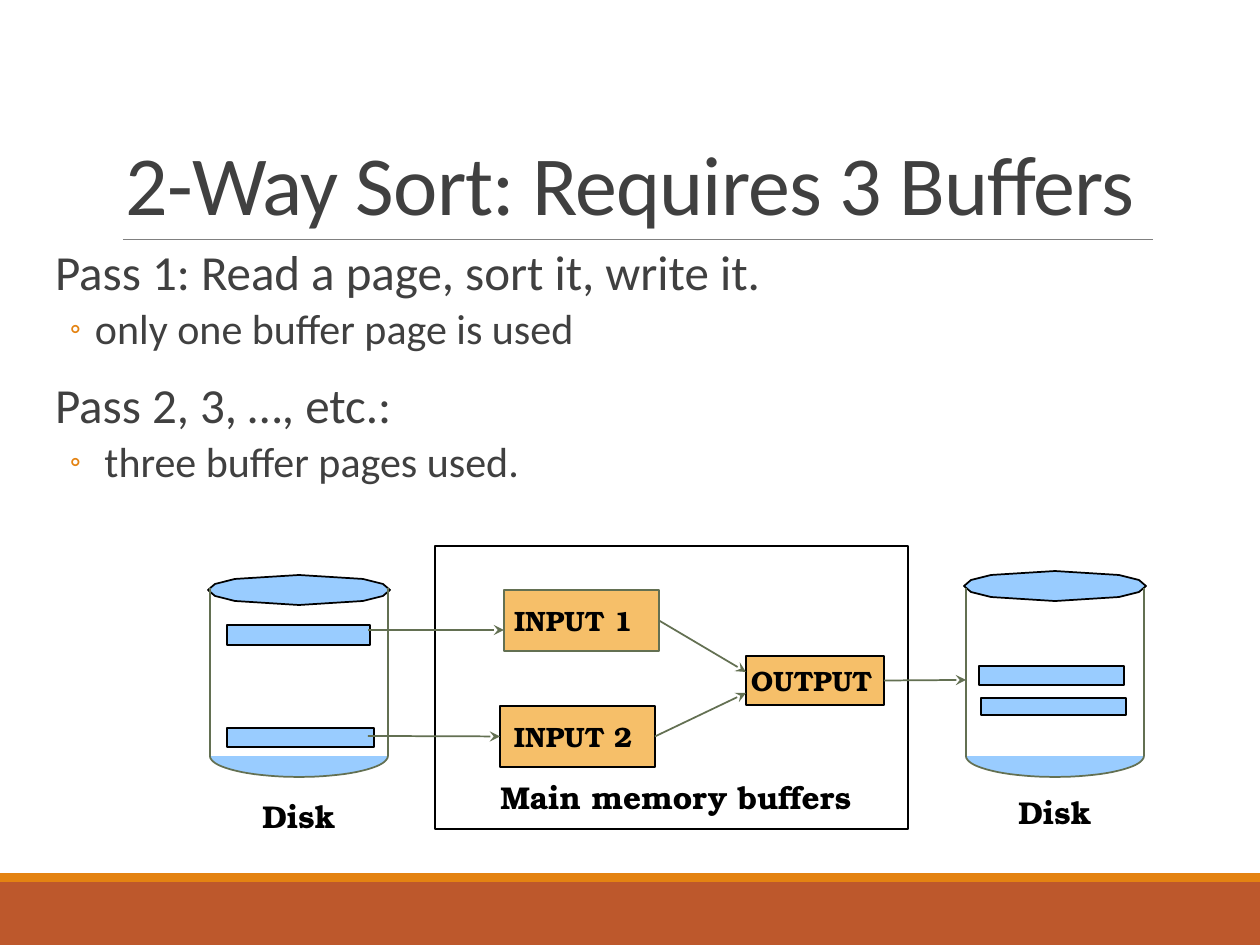
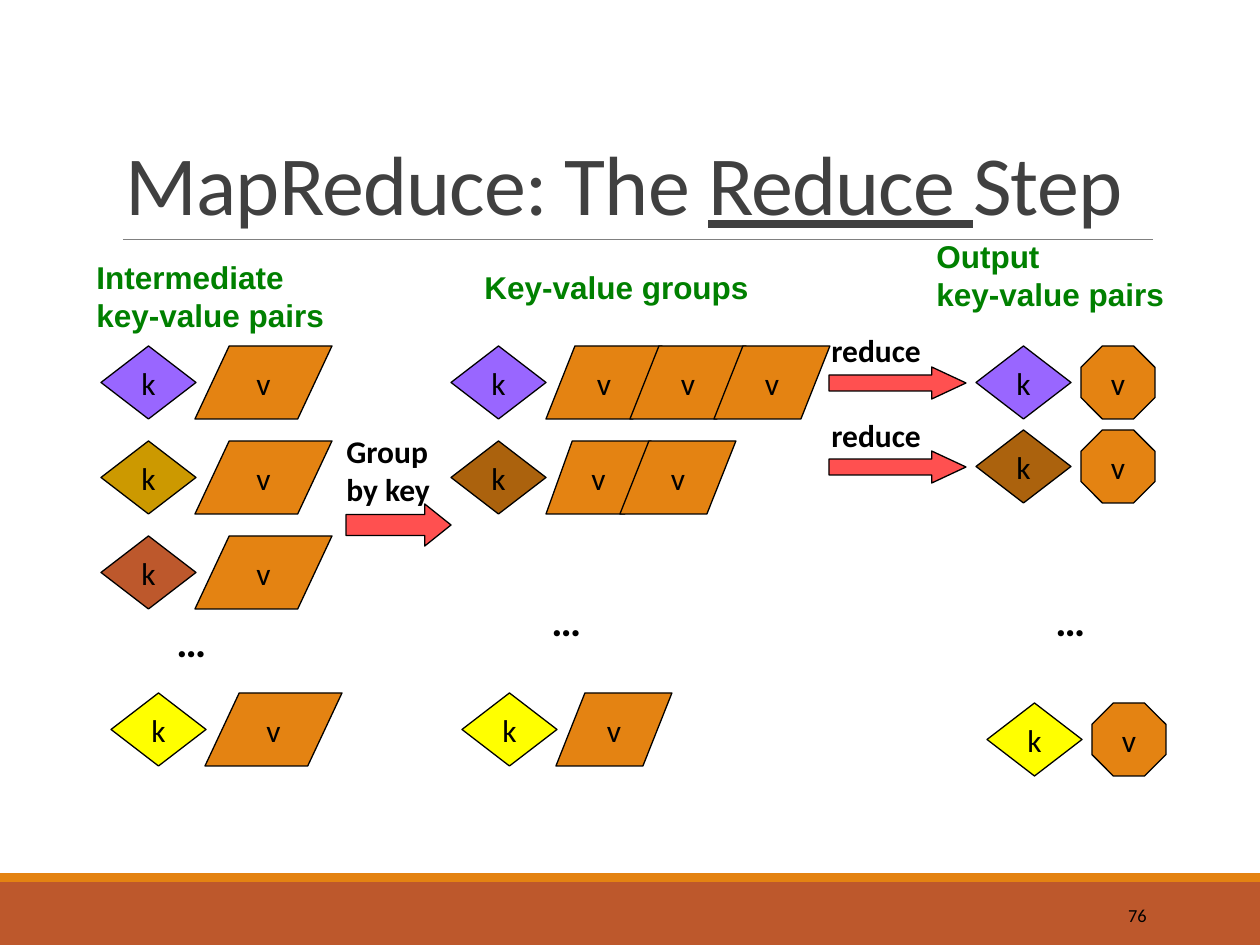
import math

import lxml.etree
import pptx
import pptx.dml.color
import pptx.enum.shapes
import pptx.enum.text
import pptx.oxml.ns
import pptx.util

SHAPE = pptx.enum.shapes.MSO_SHAPE
ALIGN = pptx.enum.text.PP_ALIGN
ANCHOR = pptx.enum.text.MSO_ANCHOR

# Shared look; all lengths are px at 126 to the inch
EMU_PER_PX = 914400 / 126
WIDTH, HEIGHT = 1260, 945
COLORS = {
    "band": "BD582C", "stripe": "E48312", "rule": "808080", "text": "404040",
    "black": "000000", "disk": "99CCFF", "buffer": "F6BF69", "outline": "637052",
    "heading": "008000", "arrow": "FF5050", "value": "E48312",
    "purple": "9966FF", "gold": "CC9900", "rust": "BD582C",
    "brown": "AB620D", "yellow": "FFFF00",
}
SANS, HEADING, SERIF = "Calibri", "Arial", "TeX Gyre Bonum"

# Slide 1 content
SORT_TITLE = [("2-Way Sort: Requires 3 Buffers", False)]
SORT_LINES = [
    (0, "Pass 1: Read a page, sort it, write it."),
    (1, "only one buffer page is used"),
    (0, "Pass 2, 3, …, etc.:"),
    (1, " three buffer pages used."),
]
LINE_STYLES = [  # size, space before, space after, left margin, indent
    (28, 12, 2, 13, 0),
    (24, 2, 4, 53, -25),
]
DISKS = [  # centre, lid middle, label top, pages
    (299, 590, 791, [(227, 625, 143, 20), (227, 728, 147, 19)]),
    (1055, 586, 787, [(979, 666, 145, 19), (981, 698, 145, 17)]),
]
DISK_RADIUS, DISK_TOP, DISK_BOTTOM, BOWL_DEPTH = 89, 588, 756, 21
LID_QUARTER = [(91, 0), (84, 6), (64, 11), (0, 15)]
MEMORY = (435, 546, 473, 283)
BUFFERS = {  # box, text inset, line
    "INPUT 1": ((504, 590, 155, 61), 10, "outline"),
    "INPUT 2": ((500, 706, 155, 61), 14, "black"),
    "OUTPUT": ((746, 656, 138, 49), 5, "black"),
}
FLOWS = [  # start, end, buffer joined at start, buffer joined at end
    ((368, 630), (504, 630), None, None),
    ((368, 736), (500, 736), None, "INPUT 2"),
    ((659, 620), (746, 672), "INPUT 1", None),
    ((655, 736), (746, 693), "INPUT 2", None),
    ((884, 680), (966, 680), "OUTPUT", None),
]

# Slide 2 content
REDUCE_TITLE = [("MapReduce: The ", False), ("Reduce ", True), ("Step", False)]
HEADINGS = [
    (84, 252, 270, ["Intermediate", "key-value pairs"]),
    (472, 262, 325, ["Key-value groups"]),
    (924, 231, 283, ["Output", "key-value pairs"]),
]
KEY_SIZE = (95, 73)
INPUT_PAIR = [(94, 137)]  # value offset from the key, value width
OUTPUT_PAIR = [(105, 74)]
KEY_VALUES = [  # left, top, key colour, values, value shape
    (111, 693, "yellow", INPUT_PAIR, SHAPE.PARALLELOGRAM),
    (101, 346, "purple", INPUT_PAIR, SHAPE.PARALLELOGRAM),
    (101, 441, "gold", INPUT_PAIR, SHAPE.PARALLELOGRAM),
    (101, 536, "rust", INPUT_PAIR, SHAPE.PARALLELOGRAM),
    (451, 346, "purple", [(95, 116), (179, 116), (263, 116)], SHAPE.PARALLELOGRAM),
    (451, 441, "brown", [(95, 105), (169, 116)], SHAPE.PARALLELOGRAM),
    (462, 693, "yellow", [(94, 116)], SHAPE.PARALLELOGRAM),
    (976, 346, "purple", OUTPUT_PAIR, SHAPE.OCTAGON),
    (976, 430, "brown", OUTPUT_PAIR, SHAPE.OCTAGON),
    (987, 703, "yellow", OUTPUT_PAIR, SHAPE.OCTAGON),
]
STEPS = [  # arrow box, label corner, label lines
    ((346, 504, 105, 42), (334, 426), ["Group", "by key"]),
    ((829, 367, 137, 32), (819, 325), ["reduce"]),
    ((829, 451, 137, 32), (819, 410), ["reduce"]),
]
ELLIPSES = [(164, 609), (539, 588), (1043, 588)]
PAGE_NUMBER = "76"


def px(length):
    return pptx.util.Emu(round(length * EMU_PER_PX))


def rgb(name):
    return pptx.dml.color.RGBColor.from_string(COLORS[name])


def place(shape, left, top, width, height):
    shape.left, shape.top = px(left), px(top)
    shape.width, shape.height = px(width), px(height)


def add_run(paragraph, text, size, font=SANS, color="black", bold=False):
    run = paragraph.add_run()
    run.text = text
    run.font.size, run.font.name, run.font.bold = pptx.util.Pt(size), font, bold
    run.font.color.rgb = rgb(color)
    return run


def paint(shape, fill=None, line=None, weight=1):
    shape.shadow.inherit = False
    if fill:
        shape.fill.solid()
        shape.fill.fore_color.rgb = rgb(fill)
    else:
        shape.fill.background()
    if line:
        shape.line.color.rgb = rgb(line)
        shape.line.width = pptx.util.Pt(weight)
    else:
        shape.line.fill.background()
    return shape


def add_preset(slide, preset, box, fill=None, line=None, weight=1):
    shape = slide.shapes.add_shape(preset, *map(px, box))
    return paint(shape, fill, line, weight)


def add_outline(slide, points, close):
    builder = slide.shapes.build_freeform(
        round(points[0][0] * 10), round(points[0][1] * 10), scale=EMU_PER_PX / 10)
    builder.add_line_segments(
        [(round(x * 10), round(y * 10)) for x, y in points[1:]], close=close)
    return builder.convert_to_shape()


def add_line(slide, start, end, color="outline", weight=1, arrow=False):
    line = slide.shapes.add_connector(
        pptx.enum.shapes.MSO_CONNECTOR.STRAIGHT, *map(px, (*start, *end)))
    line.line.color.rgb = rgb(color)
    line.line.width = pptx.util.Pt(weight)
    if arrow:
        lxml.etree.SubElement(line.line._get_or_add_ln(),
                              pptx.oxml.ns.qn("a:tailEnd"), type="stealth")
    lxml.etree.SubElement(line._element.spPr, pptx.oxml.ns.qn("a:effectLst"))
    return line


def add_label(slide, box, lines, size=18, font=SANS, color="black", bold=True):
    label = slide.shapes.add_textbox(*map(px, box))
    frame = label.text_frame
    frame.word_wrap = True
    for index, text in enumerate(lines):
        paragraph = frame.add_paragraph() if index else frame.paragraphs[0]
        add_run(paragraph, text, size, font, color, bold)
    return label


def add_framed_slide(presentation, layout_index, title_runs):
    """Add a slide with the bottom bands, the rule and its title."""
    slide = presentation.slides.add_slide(presentation.slide_layouts[layout_index])
    add_preset(slide, SHAPE.RECTANGLE, (0, 882, WIDTH, 63), "band")
    add_preset(slide, SHAPE.RECTANGLE, (0, 873, WIDTH, 9), "stripe")
    add_line(slide, (123, 239), (1153, 239), "rule", 0.5)
    title = slide.shapes.title
    place(title, 113, 39, 1040, 200)
    frame = title.text_frame
    frame.auto_size = pptx.enum.text.MSO_AUTO_SIZE.NONE
    frame.vertical_anchor = ANCHOR.BOTTOM
    paragraph = frame.paragraphs[0]
    paragraph.alignment, paragraph.line_spacing = ALIGN.LEFT, 0.85
    for text, underlined in title_runs:
        run = add_run(paragraph, text, 48, color="text")
        run.font.underline = underlined
        run._r.get_or_add_rPr().set("spc", "-50")
    return slide


def set_bullet(paragraph, level, margin, indent):
    properties = paragraph._p.get_or_add_pPr()
    properties.set("marL", str(px(margin)))
    properties.set("indent", str(px(indent)))
    qn = pptx.oxml.ns.qn
    if level == 0:
        lxml.etree.SubElement(properties, qn("a:buNone"))
        return
    color = lxml.etree.SubElement(properties, qn("a:buClr"))
    lxml.etree.SubElement(color, qn("a:srgbClr"), val=COLORS["stripe"])
    lxml.etree.SubElement(properties, qn("a:buSzPct"), val="75000")
    lxml.etree.SubElement(properties, qn("a:buFont"), typeface=SANS)
    lxml.etree.SubElement(properties, qn("a:buChar"), char="◦")


def fill_body(body):
    place(body, 42, 242, 1207, 651)
    frame = body.text_frame
    frame.auto_size = pptx.enum.text.MSO_AUTO_SIZE.NONE
    frame.margin_left = frame.margin_right = 0
    for index, (level, text) in enumerate(SORT_LINES):
        size, before, after, margin, indent = LINE_STYLES[level]
        paragraph = frame.add_paragraph() if index else frame.paragraphs[0]
        paragraph.level, paragraph.line_spacing = level, 0.9
        paragraph.space_before = pptx.util.Pt(before)
        paragraph.space_after = pptx.util.Pt(after)
        set_bullet(paragraph, level, margin, indent)
        add_run(paragraph, text, size, color="text")


def add_disk(slide, center, lid_middle, label_top, pages):
    # Lid: one quarter mirrored round the centre
    half = LID_QUARTER + [(-x, y) for x, y in LID_QUARTER[-2::-1]]
    ring = half + [(-x, -y) for x, y in half[1:-1]]
    lid = add_outline(slide, [(center + x, lid_middle + y) for x, y in ring], True)
    paint(lid, "disk", "black")
    # Bowl: lower half of an ellipse, left open along its top
    angles = [math.pi * step / 36 for step in range(37)]
    bowl = add_outline(slide, [(center + DISK_RADIUS * math.cos(angle),
                                DISK_BOTTOM + BOWL_DEPTH * math.sin(angle))
                               for angle in angles], False)
    paint(bowl, "disk", "outline")
    for x in (center - DISK_RADIUS, center + DISK_RADIUS):
        add_line(slide, (x, DISK_TOP), (x, DISK_BOTTOM))
    for page in pages:
        add_preset(slide, SHAPE.RECTANGLE, page, "disk", "black")
    add_label(slide, (center - 49, label_top, 110, 50), ["Disk"], font=SERIF)


def build_sort_slide(presentation):
    slide = add_framed_slide(presentation, 1, SORT_TITLE)
    fill_body(slide.placeholders[1])
    for disk in DISKS:
        add_disk(slide, *disk)
    # Main memory and its buffers
    add_preset(slide, SHAPE.RECTANGLE, MEMORY, line="black")
    add_label(slide, (488, 772, 400, 50), ["Main memory buffers"], font=SERIF)
    buffers = {}
    for name, (box, inset, line) in BUFFERS.items():
        shape = add_preset(slide, SHAPE.RECTANGLE, box, "buffer", line)
        frame = shape.text_frame
        frame.margin_left, frame.margin_right = px(inset), 0
        frame.vertical_anchor = ANCHOR.MIDDLE
        frame.paragraphs[0].alignment = ALIGN.LEFT
        add_run(frame.paragraphs[0], name, 16, SERIF, bold=True)
        buffers[name] = shape
    # Data flow
    for start, end, source, target in FLOWS:
        arrow = add_line(slide, start, end, arrow=True)
        if source:
            arrow.begin_connect(buffers[source], 3)
        if target:
            arrow.end_connect(buffers[target], 1)


def add_symbol(slide, preset, box, letter, fill):
    shape = add_preset(slide, preset, box, fill, "black", 0.75)
    frame = shape.text_frame
    frame.word_wrap = False
    frame.vertical_anchor = ANCHOR.MIDDLE
    frame.paragraphs[0].alignment = ALIGN.CENTER
    add_run(frame.paragraphs[0], letter, 18)
    return shape


def build_reduce_slide(presentation):
    slide = add_framed_slide(presentation, 5, REDUCE_TITLE)
    for left, top, width, lines in HEADINGS:
        add_label(slide, (left, top, width, 50), lines, 18, HEADING, "heading")
    # Keys with their values
    key_width, row_height = KEY_SIZE
    for left, top, color, values, preset in KEY_VALUES:
        add_symbol(slide, SHAPE.DIAMOND, (left, top, *KEY_SIZE), "k", color)
        for offset, width in values:
            value = add_symbol(slide, preset, (left + offset, top, width, row_height),
                               "v", "value")
            if preset == SHAPE.PARALLELOGRAM:
                value.adjustments[0] = width / 4 / row_height
    # Steps between the columns
    for box, corner, lines in STEPS:
        arrow = add_preset(slide, SHAPE.RIGHT_ARROW, box, "arrow", "black", 0.75)
        arrow.adjustments[1] = box[2] / 4 / box[3]
        add_label(slide, (*corner, 135, 50), lines)
    for corner in ELLIPSES:
        add_label(slide, (*corner, 80, 63), ["…"], 24)
    number = add_label(slide, (1023, 890, 136, 50), [PAGE_NUMBER], 10.5, bold=False)
    number.text_frame.vertical_anchor = ANCHOR.MIDDLE
    number.text_frame.paragraphs[0].alignment = ALIGN.RIGHT


def main():
    presentation = pptx.Presentation()
    presentation.slide_width, presentation.slide_height = px(WIDTH), px(HEIGHT)
    build_sort_slide(presentation)
    build_reduce_slide(presentation)
    presentation.save("out.pptx")


if __name__ == "__main__":
    main()
